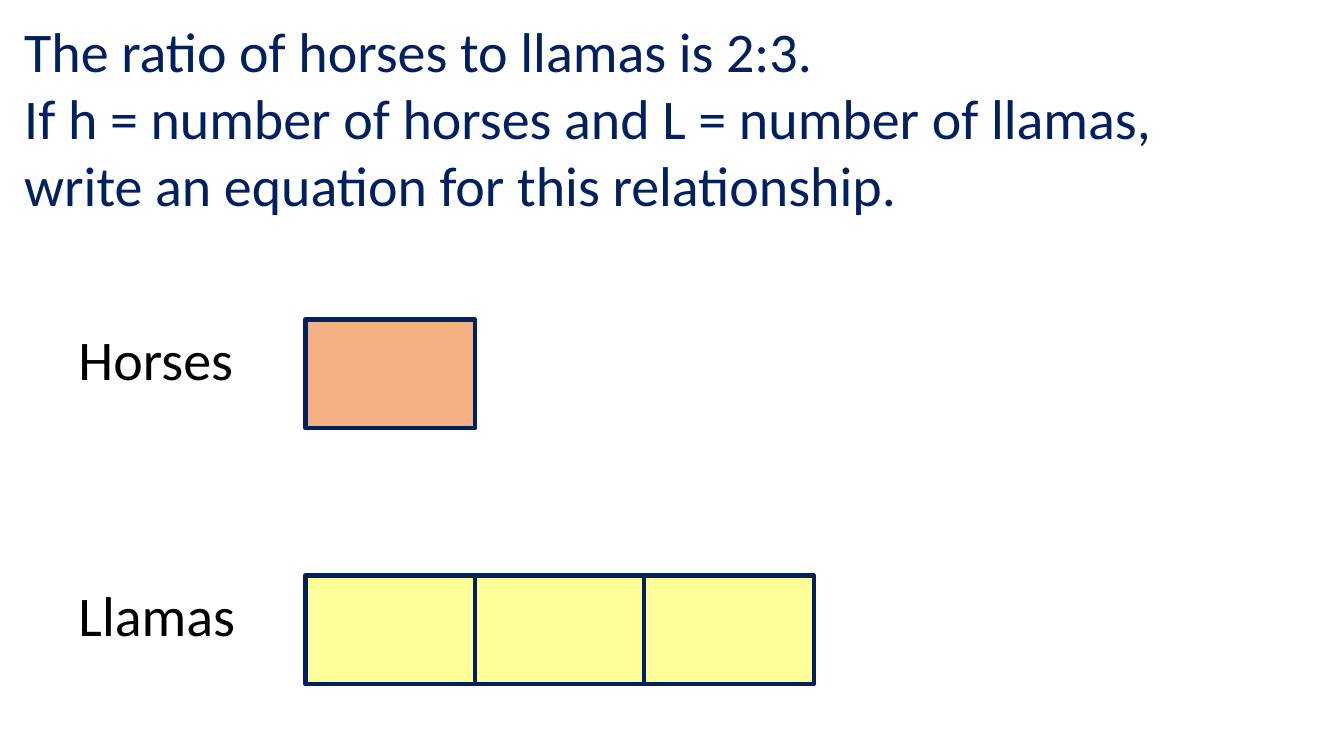
from pptx import Presentation
from pptx.dml.color import RGBColor as Rgb
from pptx.enum.shapes import MSO_SHAPE as Preset
from pptx.enum.text import MSO_ANCHOR as Anchor, MSO_AUTO_SIZE as AutoSize, PP_ALIGN as Align
from pptx.util import Pt

EMU_PER_PX = 9144
TITLE_ONLY = 5
COLORS = {
    "navy": "002060",
    "black": "000000",
    "horses": "F4B183",
    "llamas": "FFFF99",
}
FRAME_FORMAT = {
    "word_wrap": True,
    "auto_size": AutoSize.NONE,
    "vertical_anchor": Anchor.TOP,
}
FONT_FORMAT = {"name": "Calibri", "size": Pt(40), "bold": False}

QUESTION = [
    "The ratio of horses to llamas is 2:3.",
    "If h = number of horses and L = number of llamas,",
    "write an equation for this relationship.",
]
BARS = [
    ("Horses", "horses", 1, 317),
    ("Llamas", "llamas", 3, 571),
]
LABEL_LEFT, LABEL_WIDTH, LABEL_HEIGHT = 68, 182, 77
BAR_LEFT, UNIT_WIDTH, UNIT_HEIGHT = 303, 168, 108


def px(length):
    return length * EMU_PER_PX


def color(name):
    return Rgb.from_string(COLORS[name])


def set_all(target, values):
    for name, value in values.items():
        setattr(target, name, value)


def write_lines(box, lines, color_name):
    frame = box.text_frame
    set_all(frame, FRAME_FORMAT)
    frame.text = "\n".join(lines)
    for para in frame.paragraphs:
        set_all(para, {"alignment": Align.LEFT, "space_before": Pt(0)})
        for span in para.runs:
            set_all(span.font, FONT_FORMAT)
            span.font.color.rgb = color(color_name)


def place_title(page, lines, left, top, width, height):
    title = page.shapes.title
    set_all(title, {"left": px(left), "top": px(top), "width": px(width), "height": px(height)})
    write_lines(title, lines, "navy")


def add_label(page, text, top):
    box = page.shapes.add_textbox(px(LABEL_LEFT), px(top), px(LABEL_WIDTH), px(LABEL_HEIGHT))
    write_lines(box, [text], "black")


def add_bar(page, units, top, fill_name):
    for index in range(units):
        left = BAR_LEFT + index * UNIT_WIDTH
        unit = page.shapes.add_shape(
            Preset.RECTANGLE, px(left), px(top), px(UNIT_WIDTH), px(UNIT_HEIGHT)
        )
        unit.shadow.inherit = False
        unit.fill.solid()
        unit.fill.fore_color.rgb = color(fill_name)
        unit.line.color.rgb = color("navy")
        unit.line.width = Pt(3)


def main():
    deck = Presentation()
    set_all(deck, {"slide_width": px(1333), "slide_height": px(750)})
    page = deck.slides.add_slide(deck.slide_layouts[TITLE_ONLY])
    place_title(page, QUESTION, 14, 11, 1305, 212)
    for label, fill_name, units, top in BARS:
        add_bar(page, units, top, fill_name)
        add_label(page, label, top)
    deck.save("out.pptx")


if __name__ == "__main__":
    main()
